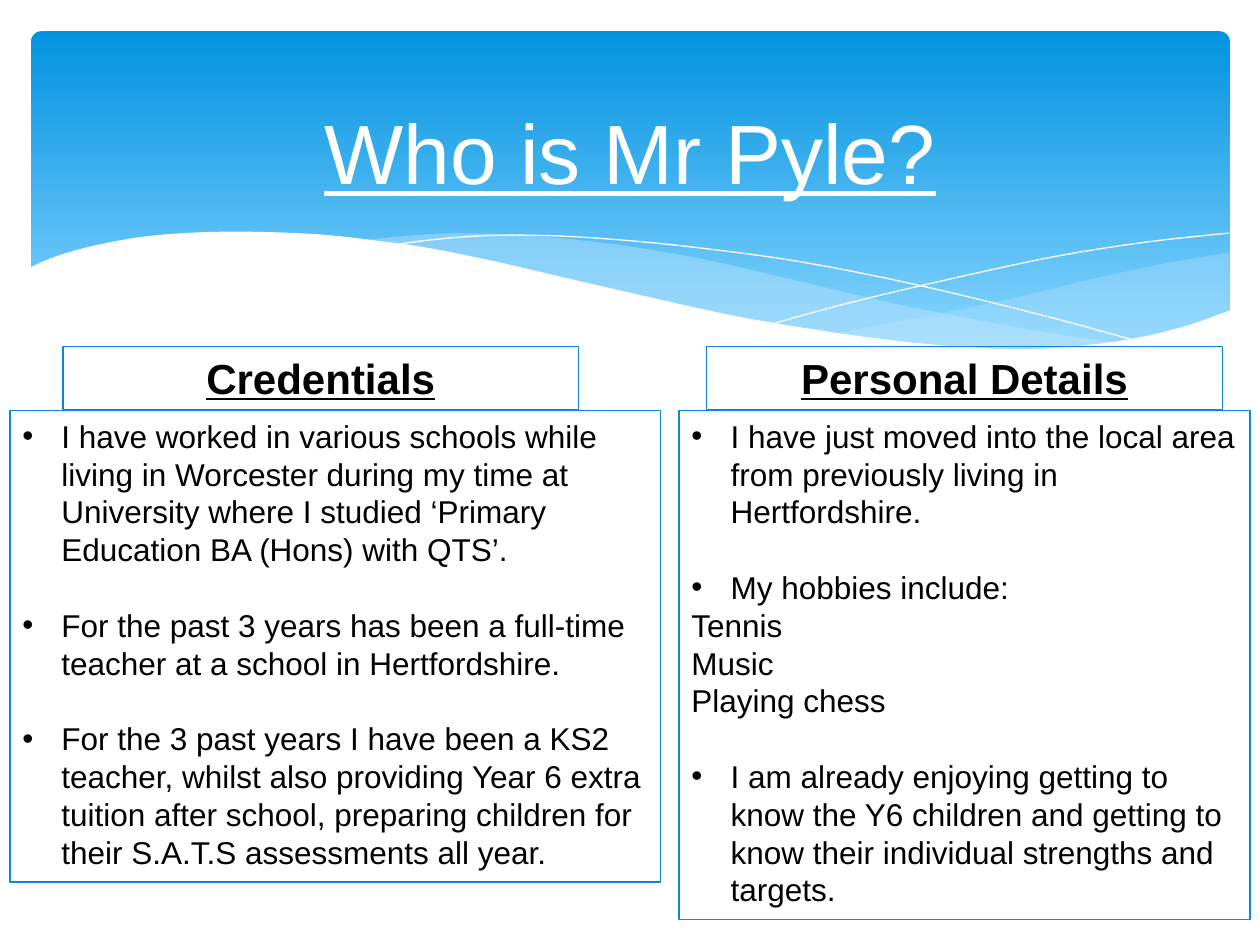
from lxml import etree
from pptx import Presentation
from pptx.dml.color import RGBColor
from pptx.enum.shapes import MSO_SHAPE
from pptx.enum.text import MSO_ANCHOR, PP_ALIGN
from pptx.oxml.ns import qn
from pptx.util import Cm, Pt

RECT = MSO_SHAPE.RECTANGLE
ROUND = MSO_SHAPE.ROUNDED_RECTANGLE
TOP, MIDDLE = MSO_ANCHOR.TOP, MSO_ANCHOR.MIDDLE
LEFT, CENTER = PP_ALIGN.LEFT, PP_ALIGN.CENTER

FONT = "Arial"
WHITE, BLACK = "FFFFFF", "000000"
BLUE, PALE = "0B87D6", "C6E7FC"
INDENT = Cm(0.79)
PITCH = 1.2  # line height per point of text size

# Curves of the wave, as knots in cm
FAN = [
    [(24.79, 5.08), (23.39, 5.33), (21.87, 5.66), (19.79, 6.15), (16.79, 6.73)],
    [(16.79, 6.73), (18.26, 6.91), (19.84, 7.04), (21.44, 7.04), (22.99, 6.83),
     (23.93, 6.58), (24.79, 6.27)],
]
SWELL = [
    [(22.68, 6.93), (21.26, 6.73), (19.69, 6.45), (17.93, 6.1), (15.98, 5.64),
     (14.1, 5.21), (12.42, 4.93), (10.67, 4.75), (9.17, 4.7), (7.95, 4.78),
     (7.26, 4.85)],
    [(7.26, 4.85), (8.69, 5.05), (10.26, 5.36), (12.47, 5.89), (14.38, 6.3),
     (16.1, 6.63), (17.65, 6.86), (19, 7.01), (20.5, 7.06), (21.77, 7.04),
     (22.68, 6.93)],
]
FALL = [[(7.85, 4.95), (8.74, 4.83), (9.83, 4.75), (11, 4.75), (12.42, 4.83),
         (14.12, 5), (16.15, 5.28), (18.47, 5.74), (21.11, 6.38), (23.04, 6.91)]]
RISE = [[(15.57, 6.53), (17.07, 6.12), (19, 5.66), (21.23, 5.18),
         (23.11, 4.88), (24.77, 4.7)]]
FRONT = [
    [(24.82, 6.25), (23.88, 6.58), (22.83, 6.83), (21.59, 6.99), (20.55, 7.04),
     (19.33, 6.99), (17.98, 6.86), (16.46, 6.65), (14.71, 6.35), (12.78, 5.92),
     (11.35, 5.59), (9.93, 5.26), (8.64, 5), (7.42, 4.83), (6.35, 4.72),
     (4.9, 4.67), (3.71, 4.7), (2.69, 4.8), (1.7, 5), (1.02, 5.21), (0.58, 5.41)],
    [(0.58, 8.36), (24.82, 8.36)],
]

# Body text: (text, bullet, gap above)
WORK = [
    ("I have worked in various schools while living in Worcester during my time "
     "at University where I studied ‘Primary Education BA (Hons) with QTS’.", True, False),
    ("For the past 3 years has been a full-time teacher at a school in "
     "Hertfordshire.", True, True),
    ("For the 3 past years I have been a KS2 teacher, whilst also providing Year 6 "
     "extra tuition after school, preparing children for their S.A.T.S assessments "
     "all year.", True, True),
]
LIFE = [
    ("I have just moved into the local area from previously living in "
     "Hertfordshire.", True, False),
    ("My hobbies include:", True, True),
    ("Tennis", False, False),
    ("Music", False, False),
    ("Playing chess", False, False),
    ("I am already enjoying getting to know the Y6 children and getting to know "
     "their individual strengths and targets.", True, True),
]


def color(code):
    return RGBColor.from_string(code)


def smooth(knots, steps=4):
    """Points of a Catmull-Rom curve through the knots."""
    ends = [knots[0], *knots, knots[-1]]
    points = [knots[0]]
    for a, b, c, d in zip(ends, ends[1:], ends[2:], ends[3:]):
        for i in range(1, steps + 1):
            t = i / steps
            points.append(tuple(
                q + t / 2 * (r - p + t * (2 * p - 5 * q + 4 * r - s
                                          + t * (3 * (q - r) + s - p)))
                for p, q, r, s in zip(a, b, c, d)))
    return points


def draw(slide, curves, fill=None, alpha=100):
    """A filled wave, or a white hairline when there is no fill."""
    points = [(Cm(x), Cm(y)) for knots in curves for x, y in smooth(knots)]
    pen = slide.shapes.build_freeform(*points[0], scale=1.0)
    pen.add_line_segments(points[1:], close=fill is not None)
    shape = pen.convert_to_shape()
    shape.shadow.inherit = False
    if fill is None:
        shape.fill.background()
        shape.line.color.rgb = color(WHITE)
        shape.line.width = 0
        return
    shape.fill.solid()
    shape.fill.fore_color.rgb = color(fill)
    shape.line.fill.background()
    if alpha < 100:
        tint = shape.fill._xPr.find(".//" + qn("a:srgbClr"))
        etree.SubElement(tint, qn("a:alpha"), val=str(alpha * 1000))


def add_sky(slide):
    sky = slide.shapes.add_shape(ROUND, Cm(0.63), Cm(0.63), Cm(24.16), Cm(6.86))
    sky.adjustments[0] = 0.03
    sky.shadow.inherit = False
    sky.line.fill.background()
    sky.fill.gradient()
    sky.fill.gradient_angle = 270
    for stop, code, place in zip(sky.fill.gradient_stops, ("0293E0", "83D3FE"), (0, 0.9)):
        stop.color.rgb = color(code)
        stop.position = place


def style(para, size, code=BLACK, bold=False, under=False):
    for run in para.runs:
        font = run.font
        font.name, font.size = FONT, Pt(size)
        font.bold, font.underline = bold, under
        font.color.rgb = color(code)


def bullet(para):
    props = para._p.get_or_add_pPr()
    props.set("marL", str(INDENT))
    props.set("indent", str(-INDENT))
    etree.SubElement(props, qn("a:buFont"), typeface=FONT)
    etree.SubElement(props, qn("a:buChar"), char="•")


def add_title(slide, text):
    box = slide.shapes.add_textbox(Cm(1.27), Cm(1.3), Cm(22.86), Cm(3.48))
    frame = box.text_frame
    frame.word_wrap = True
    frame.vertical_anchor = MIDDLE
    frame.text = text
    para = frame.paragraphs[0]
    para.alignment = CENTER
    style(para, 48, WHITE, under=True)


def add_box(slide, left, top, width, height):
    box = slide.shapes.add_shape(RECT, Cm(left), Cm(top), Cm(width), Cm(height))
    box.shadow.inherit = False
    box.fill.background()
    box.line.color.rgb = color(BLUE)
    box.line.width = Pt(0.75)
    frame = box.text_frame
    frame.word_wrap = True
    frame.vertical_anchor = TOP
    return frame


def add_body(slide, left, width, height, items):
    frame = add_box(slide, left, 8.28, width, height)
    pitch = Pt(18 * PITCH)
    for i, (text, mark, gap) in enumerate(items):
        para = frame.add_paragraph() if i else frame.paragraphs[0]
        para.text = text
        para.alignment = LEFT
        para.line_spacing = pitch
        para.space_before = pitch if gap else 0
        if mark:
            bullet(para)
        style(para, 18)


def add_head(slide, left, text):
    frame = add_box(slide, left, 6.98, 10.39, 1.28)
    frame.text = text
    para = frame.paragraphs[0]
    para.alignment = CENTER
    para.line_spacing = Pt(24 * PITCH)
    style(para, 24, bold=True, under=True)


def main():
    deck = Presentation()
    deck.slide_width, deck.slide_height = Cm(25.4), Cm(19.05)
    slide = deck.slides.add_slide(deck.slide_layouts[6])

    # Sky and waves
    add_sky(slide)
    draw(slide, FAN, PALE, 29)
    draw(slide, SWELL, PALE, 40)
    draw(slide, FALL)
    draw(slide, RISE)
    draw(slide, FRONT, WHITE)

    # Title and the two columns
    add_title(slide, "Who is Mr Pyle?")
    add_body(slide, 0.2, 13.11, 9.5, WORK)
    add_body(slide, 13.69, 11.51, 10.26, LIFE)
    add_head(slide, 1.27, "Credentials")
    add_head(slide, 14.25, "Personal Details")

    deck.save("out.pptx")


if __name__ == "__main__":
    main()
